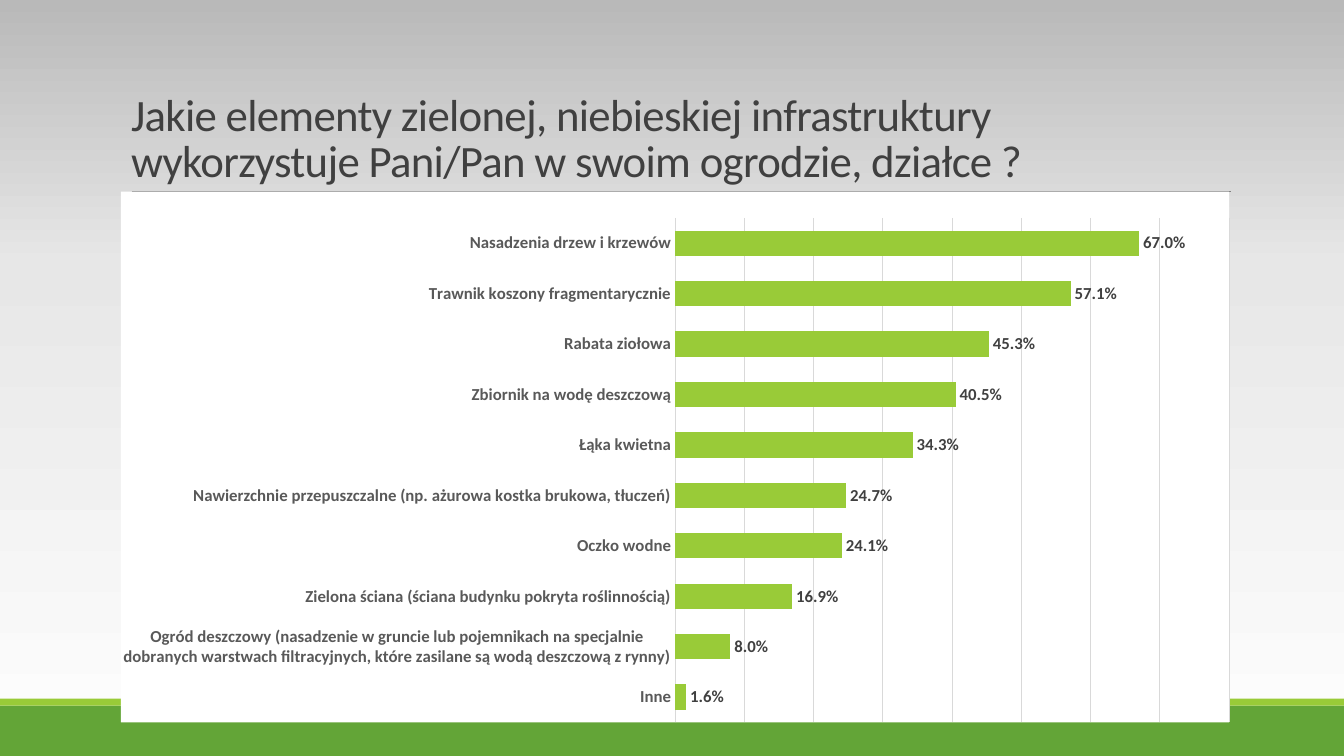
"""Build a slide with a bar chart of green and blue garden elements."""
from copy import deepcopy
from dataclasses import dataclass

from lxml.etree import SubElement
from pptx import Presentation
from pptx.chart.data import CategoryChartData
from pptx.dml.color import RGBColor
from pptx.enum.chart import XL_CHART_TYPE, XL_LABEL_POSITION, XL_TICK_LABEL_POSITION, XL_TICK_MARK
from pptx.enum.shapes import MSO_CONNECTOR, MSO_SHAPE
from pptx.enum.text import MSO_ANCHOR, MSO_AUTO_SIZE, PP_ALIGN
from pptx.oxml import parse_xml
from pptx.oxml.ns import nsdecls, qn
from pptx.util import Pt


@dataclass
class Theme:
    """Colours, font and type sizes of the slide."""
    green: str = "63A537"
    lime: str = "99CB38"
    rule: str = "808080"
    grid: str = "D9D9D9"
    dark: str = "404040"
    grey: str = "595959"
    black: str = "000000"
    white: str = "FFFFFF"
    sky: tuple = ((0, "FEFEFE"), (0.65, "E7E7E7"), (1, "B9B9B9"))
    face: str = "Calibri"
    head: int = 32
    body: int = 12


theme = Theme()


def style(font, size=theme.body, color=theme.dark, bold=True):
    """Set the face, size, colour and weight of a font."""
    font.name, font.size, font.bold = theme.face, Pt(size), bold
    font.color.rgb = RGBColor.from_string(color)


def write(frame, text, spacing=1.0, track=0, **look):
    """Put one formatted paragraph into a text frame."""
    para = frame.paragraphs[0]
    para.alignment = PP_ALIGN.LEFT
    para.line_spacing = spacing
    run = para.add_run()
    run.text = text
    style(run.font, **look)
    run.font._element.set("spc", str(track))


deck = Presentation()
deck.slide_width, deck.slide_height = Pt(960), Pt(540)
slide = deck.slides.add_slide(deck.slide_layouts[5])

fill = slide.background.fill
fill.gradient()
fill.gradient_angle = 90
stops = next(slide.element.iter(qn("a:gsLst")))
stops.append(deepcopy(stops[-1]))
for stop, (place, color) in zip(fill.gradient_stops, theme.sky):
    stop.position = place
    stop.color.rgb = RGBColor.from_string(color)

for top, height, color in ((504, 36, theme.green), (499, 5, theme.lime)):
    band = slide.shapes.add_shape(MSO_SHAPE.RECTANGLE, 0, Pt(top), Pt(960), Pt(height))
    band.shadow.inherit = False
    band.fill.solid()
    band.fill.fore_color.rgb = RGBColor.from_string(color)
    band.line.fill.background()

rule = slide.shapes.add_connector(MSO_CONNECTOR.STRAIGHT, Pt(94), Pt(136.8), Pt(879), Pt(136.8))
rule.line.color.rgb = RGBColor.from_string(theme.rule)
rule.line.width = Pt(0.5)
SubElement(rule.element.find(qn("p:spPr")), qn("a:effectLst"))

title = slide.shapes.title
title.left, title.top, title.width, title.height = Pt(86.4), Pt(22.5), Pt(792), Pt(114.3)
frame = title.text_frame
frame.word_wrap = True
frame.auto_size = MSO_AUTO_SIZE.NONE
frame.vertical_anchor = MSO_ANCHOR.BOTTOM
write(frame, "Jakie elementy zielonej, niebieskiej infrastruktury wykorzystuje Pani/Pan w swoim ogrodzie, działce ?",
      spacing=0.85, track=-50, size=theme.head, bold=False)

shares = {
    "Nasadzenia drzew i krzewów": 0.67,
    "Trawnik koszony fragmentarycznie": 0.571,
    "Rabata ziołowa": 0.453,
    "Zbiornik na wodę deszczową": 0.405,
    "Łąka kwietna": 0.343,
    "Nawierzchnie przepuszczalne (np. ażurowa kostka brukowa, tłuczeń)": 0.247,
    "Oczko wodne": 0.241,
    "Zielona ściana (ściana budynku pokryta roślinnością)": 0.169,
    "Ogród deszczowy (nasadzenie w gruncie lub pojemnikach na specjalnie "
    "dobranych warstwach filtracyjnych, które zasilane są wodą deszczową z rynny)": 0.08,
    "Inne": 0.016,
}
data = CategoryChartData(number_format="0.0%")
data.categories = list(shares)
data.add_series("Series 1", list(shares.values()))
chart = slide.shapes.add_chart(
    XL_CHART_TYPE.BAR_CLUSTERED, Pt(86.4), Pt(136.8), Pt(792), Pt(379.5), data).chart
chart.has_title = chart.has_legend = False
style(chart.font, color=theme.black)

space = chart.element
space.find(qn("c:chart")).addnext(parse_xml(
    f'<c:spPr {nsdecls("c", "a")}><a:solidFill><a:srgbClr val="{theme.white}"/></a:solidFill>'
    '<a:ln><a:noFill/></a:ln></c:spPr>'))
area = next(space.iter(qn("c:plotArea")))
for old in area.findall(qn("c:layout")):
    area.remove(old)
layout = SubElement(area, qn("c:layout"))
area.insert(0, layout)
manual = SubElement(layout, qn("c:manualLayout"))
for tag, value in (("layoutTarget", "inner"), ("xMode", "edge"), ("yMode", "edge"),
                   ("x", "0.5"), ("y", "0.05"), ("w", "0.5"), ("h", "0.95")):
    SubElement(manual, qn(f"c:{tag}")).set("val", value)

names = chart.category_axis
names.reverse_order = True
names.major_tick_mark = names.minor_tick_mark = XL_TICK_MARK.NONE
names.tick_label_position = XL_TICK_LABEL_POSITION.NEXT_TO_AXIS
style(names.tick_labels.font, color=theme.grey)

scale = chart.value_axis
scale.minimum_scale, scale.maximum_scale, scale.major_unit = 0, 0.8, 0.1
scale.has_major_gridlines = True
scale.tick_labels.number_format = "0.0%"
scale.tick_labels.number_format_is_linked = False
scale.visible = False
for line in (names.format.line, scale.major_gridlines.format.line):
    line.color.rgb = RGBColor.from_string(theme.grid)
    line.width = Pt(0.75)

plot = chart.plots[0]
plot.gap_width = 100
plot.vary_by_categories = False
bars = plot.series[0]
bars.format.fill.solid()
bars.format.fill.fore_color.rgb = RGBColor.from_string(theme.lime)
labels = bars.data_labels
labels.show_value = True
labels.position = XL_LABEL_POSITION.OUTSIDE_END
labels.number_format = "0.0%"
labels.number_format_is_linked = False
style(labels.font)

deck.save("out.pptx")
